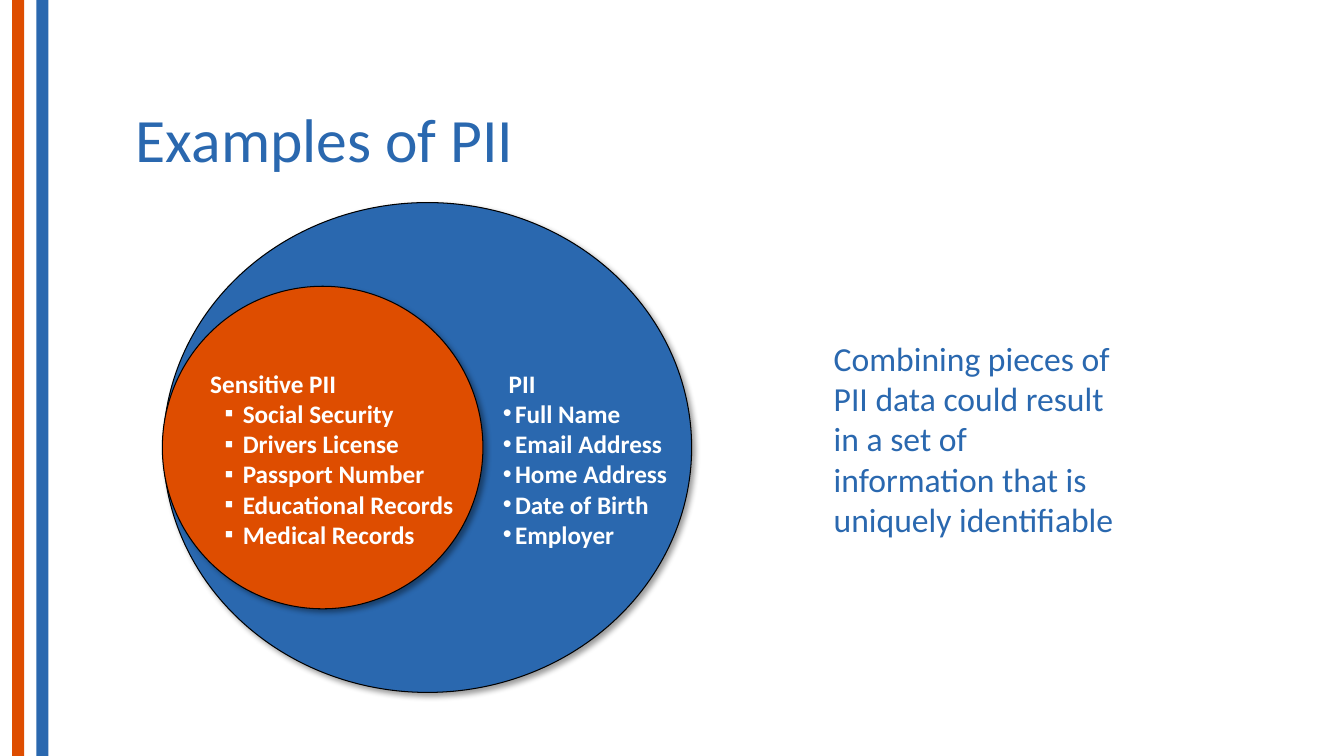
"""Build the slide on examples of personally identifiable information."""
from lxml import etree
from pptx import Presentation, util as u
from pptx.dml.color import RGBColor
from pptx.enum import shapes, text
from pptx.oxml import ns

BLUE, ORANGE, WHITE, BLACK = "2A68AF", "DE4D00", "FFFFFF", "000000"
STRIPES = [(0.12, ORANGE), (0.36, BLUE)]
OVALS = {
    "pii": ((1.62, 2.01, 5.24, 4.86), BLUE),
    "sensitive": ((1.61, 2.84, 3.18, 3.2), ORANGE),
}
TITLE = ("Examples of PII", (1.25, 0.67, 10.8, 1.48))
REMARK = (
    "Combining pieces of PII data could result in a set of information that is uniquely identifiable",
    (8.17, 3.3, 3.08, 2.12),
)
PII = {
    "heading": " PII",
    "items": ["Full Name", "Email Address", "Home Address", "Date of Birth", "Employer"],
    "place": (4.89, 3.6, 2.42, 1.92),
    "bullet": ("•", 0.12, 0.12),
}
SENSITIVE = {
    "heading": " Sensitive PII",
    "items": ["Social Security", "Drivers License", "Passport Number",
              "Educational Records", "Medical Records"],
    "place": (1.93, 3.6, 3.42, 1.92),
    "bullet": ("▪", 0.38, 0.18),
}
LABEL = {"size": u.Pt(18), "bold": True}
SHADOW = {"blurRad": u.Pt(4), "dist": u.Pt(3), "dir": 45 * 60000,
          "algn": "tl", "rotWithShape": 0}


def color(value):
    return RGBColor.from_string(value)


def add_node(parent, tag, **values):
    node = etree.SubElement(parent, ns.qn(tag))
    for key, value in values.items():
        node.set(key, str(value))
    return node


def add_figure(page, kind, place, fill):
    figure = page.shapes.add_shape(kind, *map(u.Inches, place))
    figure.shadow.inherit = False
    figure.fill.solid()
    figure.fill.fore_color.rgb = color(fill)
    figure.line.fill.background()
    return figure


def add_oval(page, place, fill):
    oval = add_figure(page, shapes.MSO_SHAPE.OVAL, place, fill)
    oval.line.color.rgb = color(BLACK)
    oval.line.width = u.Pt(0.75)
    effects = oval._element.spPr.find(ns.qn("a:effectLst"))
    shadow = add_node(effects, "a:outerShdw", **SHADOW)
    tint = add_node(shadow, "a:srgbClr", val=BLACK)
    add_node(tint, "a:alpha", val=40000)


def add_text(page, lines, place, tint, style, anchor=text.MSO_ANCHOR.TOP):
    box = page.shapes.add_textbox(*map(u.Inches, place))
    frame = box.text_frame
    frame.word_wrap = True
    frame.vertical_anchor = anchor
    for index, line in enumerate(lines):
        para = frame.paragraphs[0] if index == 0 else frame.add_paragraph()
        span = para.add_run()
        span.text = line
        span.font.name = "Calibri"
        span.font.color.rgb = color(tint)
        for key, value in style.items():
            setattr(span.font, key, value)
    return frame


def add_list(page, group):
    frame = add_text(page, [group["heading"], *group["items"]], group["place"], WHITE, LABEL)
    mark, margin, hang = group["bullet"]
    for para in frame.paragraphs[1:]:
        props = para._p.get_or_add_pPr()
        props.set("marL", str(u.Inches(margin)))
        props.set("indent", str(-u.Inches(hang)))
        add_node(props, "a:buFont", typeface="Arial")
        add_node(props, "a:buChar", char=mark)


def main():
    deck = Presentation()
    deck.slide_width, deck.slide_height = u.Inches(13.33), u.Inches(7.5)
    page = deck.slides.add_slide(deck.slide_layouts[6])
    for left, fill in STRIPES:
        add_figure(page, shapes.MSO_SHAPE.RECTANGLE, (left, 0, 0.12, 7.5), fill)
    heading, place = TITLE
    title = add_text(page, [heading], place, BLUE, {"size": u.Pt(44)}, text.MSO_ANCHOR.MIDDLE)
    title.paragraphs[0].line_spacing = 0.9
    add_oval(page, *OVALS["pii"])
    add_list(page, PII)
    remark, place = REMARK
    add_text(page, [remark], place, BLUE, {"size": u.Pt(24)})
    add_oval(page, *OVALS["sensitive"])
    add_list(page, SENSITIVE)
    deck.save("out.pptx")


if __name__ == "__main__":
    main()
